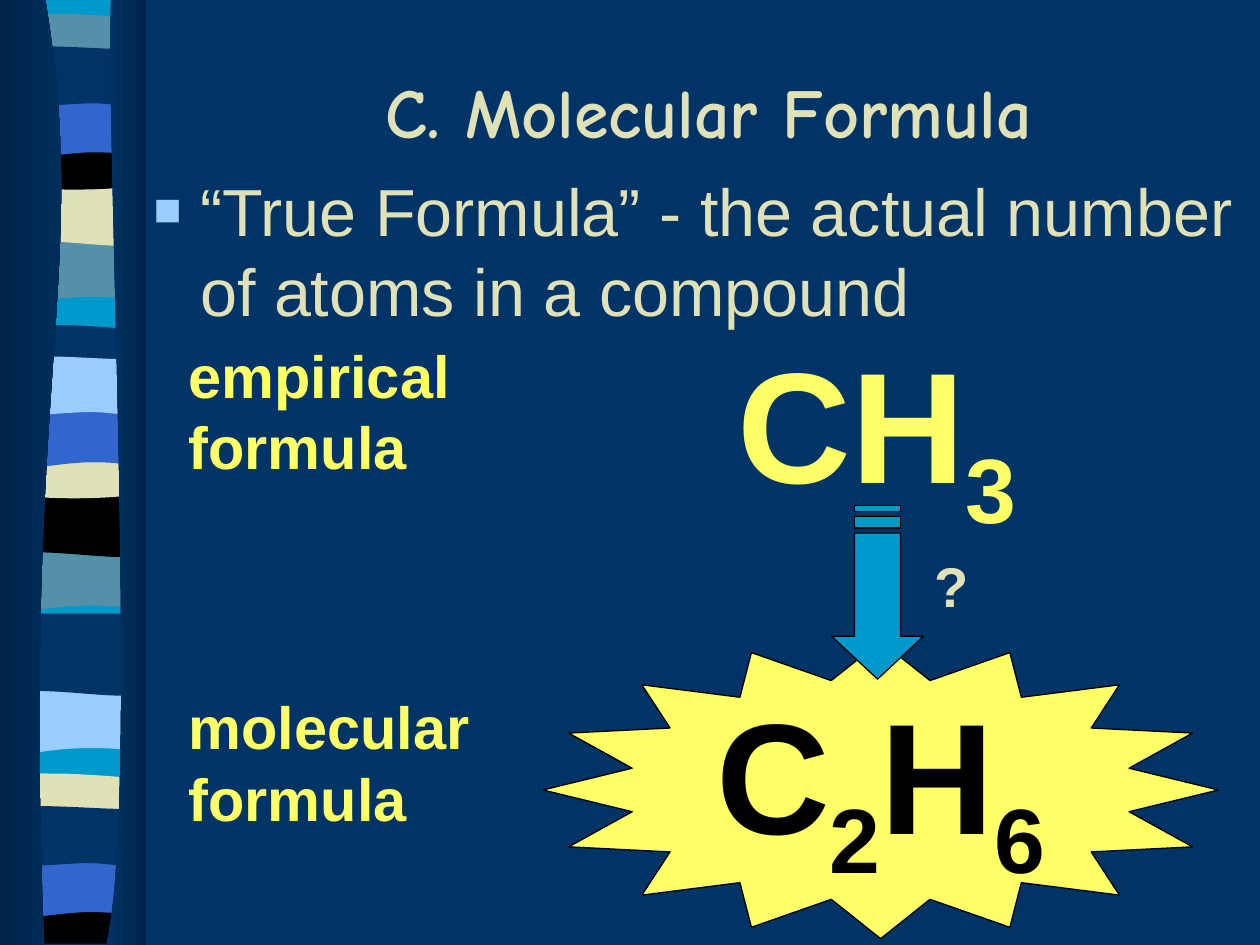
from lxml import etree
from pptx import Presentation
from pptx import util as u
from pptx.dml.color import RGBColor
from pptx.enum import shapes, text
from pptx.oxml.ns import qn

COLORS = {
    "navy": "003366", "dark": "002449", "cyan": "0099CC", "teal": "5490A8",
    "sand": "E1E1B7", "black": "000000", "blue": "3366CC", "sky": "99CCFF",
    "yellow": "FFFF66",
}
BAND_WIDTH = 1.08

EDGES = {
    "flat": [(1.08, 0), (0, 0)],
    "swell": [(1.08, 0), (0.34, -0.08), (0.19, 0.08), (0, 0)],
    "ripple": [(1.08, 0), (0.91, 0.07), (0.34, -0.06), (0, 0)],
    "bowl": [(1.08, 0), (0.9, 0.04), (0.18, 0.04), (0, 0)],
    "deep": [(1.08, 0), (0.9, 0.06), (0.18, 0.06), (0, 0)],
    "sag": [(1.08, 0), (0.85, 0), (0.66, 0.05), (0, 0)],
    "arch": [(1.08, 0), (0.91, -0.06), (0.84, -0.06), (0.66, -0.06),
             (0.48, -0.06), (0.16, 0), (0, 0)],
    "crest": [(1.08, 0), (0.95, -0.01), (0.6, -0.04), (0.42, -0.04),
              (0.24, -0.04), (0.07, -0.05), (0, 0)],
    "bump": [(1.08, 0), (1.02, 0), (0.96, 0), (0.91, 0),
             (0.73, 0), (0.15, -0.05), (0, 0)],
    "drip": [(1.08, 0), (1.01, 0.05), (0.85, 0), (0.67, 0),
             (0.49, 0), (0.11, 0.05), (0, 0)],
}
BANDS = [
    ("teal", 0.05, 1.85, 2.38, "flat", "swell"),
    ("sand", 0.06, 1.39, 1.93, "flat", "ripple"),
    ("teal", 0.06, 0.15, 0.39, "crest", "bowl"),
    ("black", 0.05, 1.08, 1.46, "sag", "deep"),
    ("blue", 0.06, 0.73, 1.27, "flat", "arch"),
    ("navy", 0.06, 0.39, 0.82, "bump", "drip"),
    ("teal", 0.04, 4.29, 4.83, "flat", "swell"),
    ("black", 0.05, 3.87, 4.4, "flat", "ripple"),
    ("navy", 0.05, 2.62, 2.86, "crest", "bowl"),
    ("sand", 0.05, 3.53, 3.91, "sag", "deep"),
    ("blue", 0.05, 3.2, 3.73, "flat", "arch"),
    ("sky", 0.05, 2.85, 3.27, "bump", "drip"),
    ("sky", 0.04, 5.42, 5.96, "flat", "swell"),
    ("navy", 0.05, 4.87, 5.5, "flat", "ripple"),
    ("sand", 0.04, 6.18, 6.42, "crest", "bowl"),
    ("black", 0.04, 7.12, 7.49, "sag", "flat"),
    ("blue", 0.03, 6.77, 7.3, "flat", "arch"),
    ("navy", 0.03, 6.42, 6.85, "bump", "drip"),
]


def rgb(name):
    """Return the named colour."""
    return RGBColor.from_string(COLORS[name])


def paint(shape, fill, line=None):
    """Give a shape a flat fill and an optional thin outline."""
    shape.shadow.inherit = False
    shape.fill.solid()
    shape.fill.fore_color.rgb = rgb(fill)
    if line:
        shape.line.color.rgb = rgb(line)
        shape.line.width = u.Pt(0.75)
    else:
        shape.line.fill.background()


def add_outline(slide, *contours):
    """Build one freeform from closed contours given in inches."""
    builder = None
    for contour in contours:
        points = [(u.Inches(x), u.Inches(y)) for x, y in contour]
        if builder is None:
            builder = slide.shapes.build_freeform(*points[0], scale=1.0)
        else:
            builder.move_to(*points[0])
        builder.add_line_segments(points[1:], close=True)
    return builder.convert_to_shape()


def add_curved_outline(slide, points, starts):
    """Build a freeform whose three segments after each start form one Bézier curve."""
    shape = add_outline(slide, points)
    segments = list(shape._element.iter(qn("a:lnTo")))
    for start in starts:
        first, *others = segments[start:start + 3]
        bezier = etree.Element(qn("a:cubicBezTo"))
        first.addprevious(bezier)
        for segment in (first, *others):
            bezier.append(segment[0])
            segment.getparent().remove(segment)
    return shape


def add_band(slide, color, left, top, bottom, top_edge, bottom_edge):
    """Draw one wavy band between two edges."""
    upper = [(left + x, top + rise) for x, rise in EDGES[top_edge]]
    lower = [(left + x, bottom + rise) for x, rise in reversed(EDGES[bottom_edge])]
    starts = [*range(0, len(upper) - 3, 3),
              *range(len(upper), len(upper) + len(lower) - 3, 3)]
    paint(add_curved_outline(slide, upper + lower, starts), color)


def add_panel(slide, points, first, last):
    """Draw a curtain beside the bands, shaded from left to right."""
    panel = add_curved_outline(slide, points, [0])
    paint(panel, first)
    panel.fill.gradient()
    panel.fill.gradient_angle = 0
    for stop, color in zip(panel.fill.gradient_stops, (first, last)):
        stop.color.rgb = rgb(color)


def add_ribbon(slide, left, top, height):
    """Draw the decorated strip at the left of the slide."""
    base = slide.shapes.add_shape(shapes.MSO_SHAPE.RECTANGLE, u.Inches(left), u.Inches(top),
                                  u.Inches(BAND_WIDTH), u.Inches(height))
    paint(base, "cyan")
    for band in BANDS:
        add_band(slide, *band)
    add_panel(slide, [(0.36, 0), (0.72, 2.16), (0.17, 2.96), (0.35, 7.5),
                      (0, 7.5), (0, 0)], "dark", "navy")
    add_panel(slide, [(0.88, 0), (0.84, 1.25), (1.11, 6.46), (0.84, 7.5),
                      (1.16, 7.5), (1.16, 0)], "navy", "dark")


def style(paragraph, size, color, bold, name="Arial"):
    """Set the font of a paragraph."""
    font = paragraph.font
    font.size, font.bold, font.name = u.Pt(size), bold, name
    font.color.rgb = rgb(color)


def add_title(slide, box, words):
    """Place and format the title."""
    title = slide.shapes.title
    title.left, title.top, title.width, title.height = map(u.Inches, box)
    title.text_frame.text = words
    title.text_frame.vertical_anchor = text.MSO_ANCHOR.MIDDLE
    style(title.text_frame.paragraphs[0], 40, "sand", True, "Comic Neue")
    title.text_frame.paragraphs[0].alignment = text.PP_ALIGN.CENTER


def add_text(slide, box, lines, size, color, bold=True):
    """Write one paragraph for each line in a box."""
    frame = slide.shapes.add_textbox(*map(u.Inches, box)).text_frame
    frame.word_wrap = True
    frame.text = "\n".join(lines)
    for paragraph in frame.paragraphs:
        style(paragraph, size, color, bold)
    return frame


def add_formula(slide, box, parts, color):
    """Write a centred formula with its digits as subscripts."""
    paragraph = add_text(slide, box, [""], 90, color).paragraphs[0]
    paragraph.alignment = text.PP_ALIGN.CENTER
    for part in parts:
        run = paragraph.add_run()
        run.text = part
        if part.isdigit():
            run.font._element.set("baseline", "-25000")


def add_definition(slide, box, words):
    """Write the bulleted definition."""
    frame = add_text(slide, box, [words], 38, "sand", bold=False)
    properties = frame.paragraphs[0]._p.get_or_add_pPr()
    properties.set("marL", str(u.Inches(0.37)))
    properties.set("indent", str(-u.Inches(0.37)))
    bullet_color = etree.Element(qn("a:buClr"))
    etree.SubElement(bullet_color, qn("a:srgbClr"), val=COLORS["sky"])
    properties[0:0] = [bullet_color, etree.Element(qn("a:buSzPct"), val="70000"),
                       etree.Element(qn("a:buFont"), typeface="Arial"),
                       etree.Element(qn("a:buChar"), char="■")]


def add_star(slide, box):
    """Draw the burst behind the molecular formula."""
    star = slide.shapes.add_shape(shapes.MSO_SHAPE.STAR_16_POINT, *map(u.Inches, box))
    star.adjustments[0] = 0.375
    paint(star, "yellow", "black")


def add_arrow(slide, left, top, width, height):
    """Draw a striped arrow pointing down."""
    inner, outer = left + width / 4, left + width * 3 / 4
    right, bottom = left + width, top + height
    shaft, neck = top + 0.22, bottom - 0.34
    head = [(right, neck), (outer, neck), (outer, shaft), (inner, shaft),
            (inner, neck), (left, neck), (left + width / 2, bottom)]
    stripes = [[(outer, top + a), (inner, top + a), (inner, top + b), (outer, top + b)]
               for a, b in ((0.09, 0.18), (0, 0.05))]
    paint(add_outline(slide, head, *stripes), "cyan", "black")


def main():
    """Build and save the slide."""
    presentation = Presentation()
    presentation.slide_width, presentation.slide_height = u.Inches(10), u.Inches(7.5)
    slide = presentation.slides.add_slide(presentation.slide_layouts[5])
    slide.background.fill.solid()
    slide.background.fill.fore_color.rgb = rgb("navy")
    add_ribbon(slide, 0.06, 0, 7.47)
    add_title(slide, (1.25, 0.25, 8.75, 1.25), "C. Molecular Formula")
    add_definition(slide, (1.12, 1.3, 8.88, 1.74),
                   "“True Formula” - the actual number of atoms in a compound")
    add_formula(slide, (5.43, 2.54, 3.06, 1.74), ["CH", "3"], "yellow")
    add_star(slide, (4.31, 5.09, 5.36, 2.36))
    add_formula(slide, (5.46, 5.32, 3.06, 1.89), ["C", "2", "H", "6"], "black")
    add_arrow(slide, 6.6, 4.01, 0.73, 1.38)
    add_text(slide, (1.4, 2.64, 2.62, 1.45), ["empirical", "formula"], 34, "yellow")
    add_text(slide, (1.4, 5.43, 2.87, 1.41), ["molecular", "formula"], 34, "yellow")
    add_text(slide, (7.32, 4.33, 0.6, 0.63), ["?"], 32, "sand")
    presentation.save("out.pptx")


if __name__ == "__main__":
    main()
